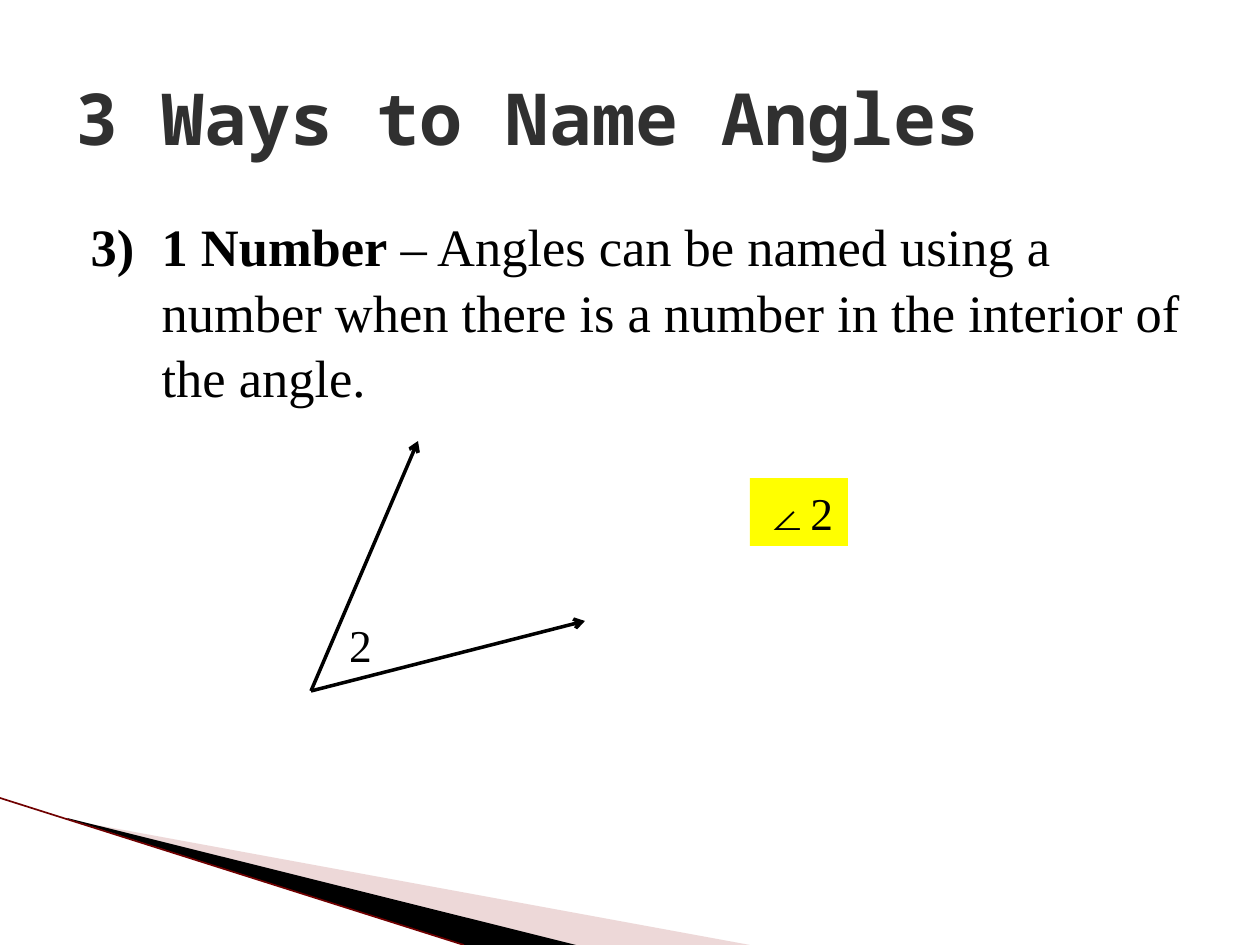
from lxml import etree
from pptx import Presentation
from pptx.dml.color import RGBColor
from pptx.enum.shapes import MSO_CONNECTOR, MSO_SHAPE
from pptx.enum.text import MSO_ANCHOR, MSO_AUTO_SIZE, PP_ALIGN
from pptx.oxml.ns import qn
from pptx.util import Pt

PX = 914400 / 126
SLIDE_SIZE = (1260, 945)

BLACK = RGBColor(0x00, 0x00, 0x00)
CHARCOAL = RGBColor(0x30, 0x30, 0x30)
ROSE = RGBColor(0xD2, 0x9E, 0x9E)
DARK_RED = RGBColor(0x70, 0x00, 0x00)
YELLOW = RGBColor(0xFF, 0xFF, 0x00)

STRAIGHT = MSO_CONNECTOR.STRAIGHT
RECTANGLE = MSO_SHAPE.RECTANGLE
MIDDLE = MSO_ANCHOR.MIDDLE
NO_FIT = MSO_AUTO_SIZE.NONE
LEFT, CENTER = PP_ALIGN.LEFT, PP_ALIGN.CENTER

SERIF = "Times New Roman"
MONO = "Noto Sans Mono"

TITLE = "3 Ways to Name Angles"
TITLE_BOX = (63, 38, 1134, 157)
RULE_NUMBER = 3
RULE_RUNS = [
    ("1 Number", True),
    (" – Angles can be named using a number when there is a number "
     "in the interior of the angle.", False),
]
RULE_BOX = (63, 204, 1134, 223)
RULE_INDENT, RULE_HANGING = 86, 71

VERTEX = (311, 691)
RAY_ENDS = [(418, 441), (585, 621)]
ANGLE_NUMBER, ANGLE_NUMBER_BOX = "2", (338, 610, 33, 68)
ANGLE_NAME, ANGLE_NAME_BOX = "∠2", (750, 478, 98, 68)

# Corner wedges: outline, colour, opacity in percent
WEDGES = [
    ([(69, 820), (750, 945), (575, 945), (69, 819)], ROSE, 40),
    ([(67, 818), (576, 945), (464, 945), (68, 819)], BLACK, 100),
]
EDGE = ((0, 798), (464, 945))


def emu(*lengths):
    return [round(length * PX) for length in lengths]


def add_run(paragraph, text, font_name, size, color, bold=False):
    run = paragraph.add_run()
    run.text = text
    run.font.name = font_name
    run.font.size = Pt(size)
    run.font.bold = bold
    run.font.color.rgb = color


def place(shape, box):
    shape.left, shape.top, shape.width, shape.height = emu(*box)


def add_wedge(slide, points, color, opacity):
    builder = slide.shapes.build_freeform(*points[0], scale=PX)
    builder.add_line_segments(points[1:], close=True)
    wedge = builder.convert_to_shape()
    wedge.shadow.inherit = False
    wedge.line.fill.background()
    wedge.fill.solid()
    wedge.fill.fore_color.rgb = color
    if opacity < 100:
        fill_color = wedge.fill._xPr.find(qn("a:solidFill"))[0]
        etree.SubElement(fill_color, qn("a:alpha"), val=str(opacity * 1000))


def add_line(slide, start, end, color, width, arrow=False):
    line = slide.shapes.add_connector(STRAIGHT, *emu(*start, *end))
    line.line.color.rgb = color
    line.line.width = Pt(width)
    if arrow:
        etree.SubElement(line.line._get_or_add_ln(), qn("a:tailEnd"), type="arrow")
    etree.SubElement(line._element.spPr, qn("a:effectLst"))


def add_title(slide):
    title = slide.shapes.title
    place(title, TITLE_BOX)
    frame = title.text_frame
    frame.auto_size = NO_FIT
    frame.vertical_anchor = MIDDLE
    frame.paragraphs[0].alignment = LEFT
    add_run(frame.paragraphs[0], TITLE, MONO, 41, CHARCOAL, bold=True)


def add_rule(slide):
    body = slide.placeholders[1]
    place(body, RULE_BOX)
    frame = body.text_frame
    frame.auto_size = NO_FIT
    frame.margin_top = emu(8)[0]
    paragraph = frame.paragraphs[0]
    paragraph.space_before = Pt(0)
    paragraph.line_spacing = 1.04
    properties = paragraph._p.get_or_add_pPr()
    indent, hanging = emu(RULE_INDENT, RULE_HANGING)
    properties.set("marL", str(indent))
    properties.set("indent", str(-hanging))
    etree.SubElement(properties, qn("a:buFont"), typeface=SERIF)
    etree.SubElement(properties, qn("a:buAutoNum"), type="arabicParenR",
                     startAt=str(RULE_NUMBER))
    for text, bold in RULE_RUNS:
        add_run(paragraph, text, SERIF, 30, BLACK, bold)


def add_angle_labels(slide):
    number = slide.shapes.add_textbox(*emu(*ANGLE_NUMBER_BOX))
    number.text_frame.margin_left, number.text_frame.margin_right = emu(11, 0)
    name = slide.shapes.add_shape(RECTANGLE, *emu(*ANGLE_NAME_BOX))
    name.shadow.inherit = False
    name.fill.solid()
    name.fill.fore_color.rgb = YELLOW
    name.line.fill.background()
    labels = [(number, ANGLE_NUMBER, LEFT), (name, ANGLE_NAME, CENTER)]
    for shape, text, alignment in labels:
        frame = shape.text_frame
        frame.word_wrap = False
        frame.vertical_anchor = MIDDLE
        frame.paragraphs[0].alignment = alignment
        add_run(frame.paragraphs[0], text, SERIF, 26, BLACK)


def main():
    presentation = Presentation()
    presentation.slide_width, presentation.slide_height = emu(*SLIDE_SIZE)
    slide = presentation.slides.add_slide(presentation.slide_layouts[1])
    for wedge in WEDGES:
        add_wedge(slide, *wedge)
    add_line(slide, *EDGE, DARK_RED, 0.95)
    add_title(slide)
    add_rule(slide)
    for end in RAY_ENDS:
        add_line(slide, VERTEX, end, BLACK, 2, arrow=True)
    add_angle_labels(slide)
    presentation.save("out.pptx")


if __name__ == "__main__":
    main()
